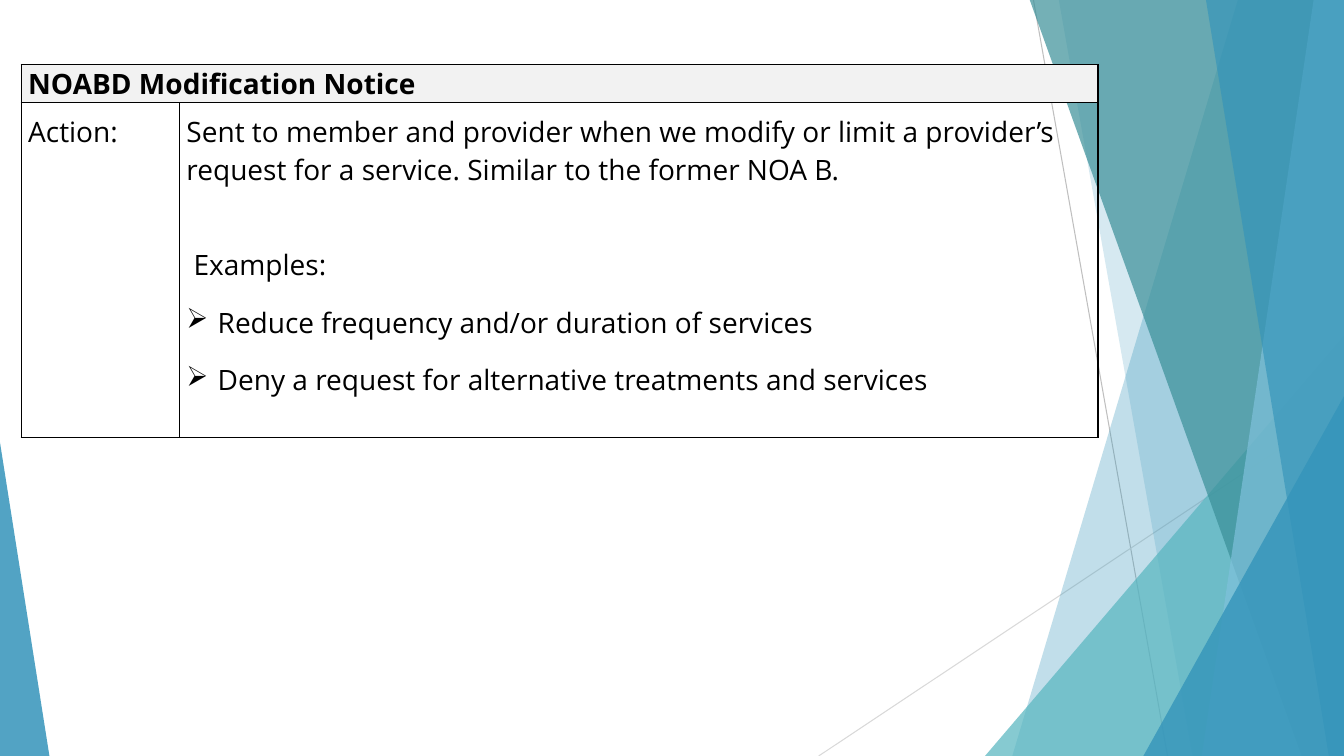
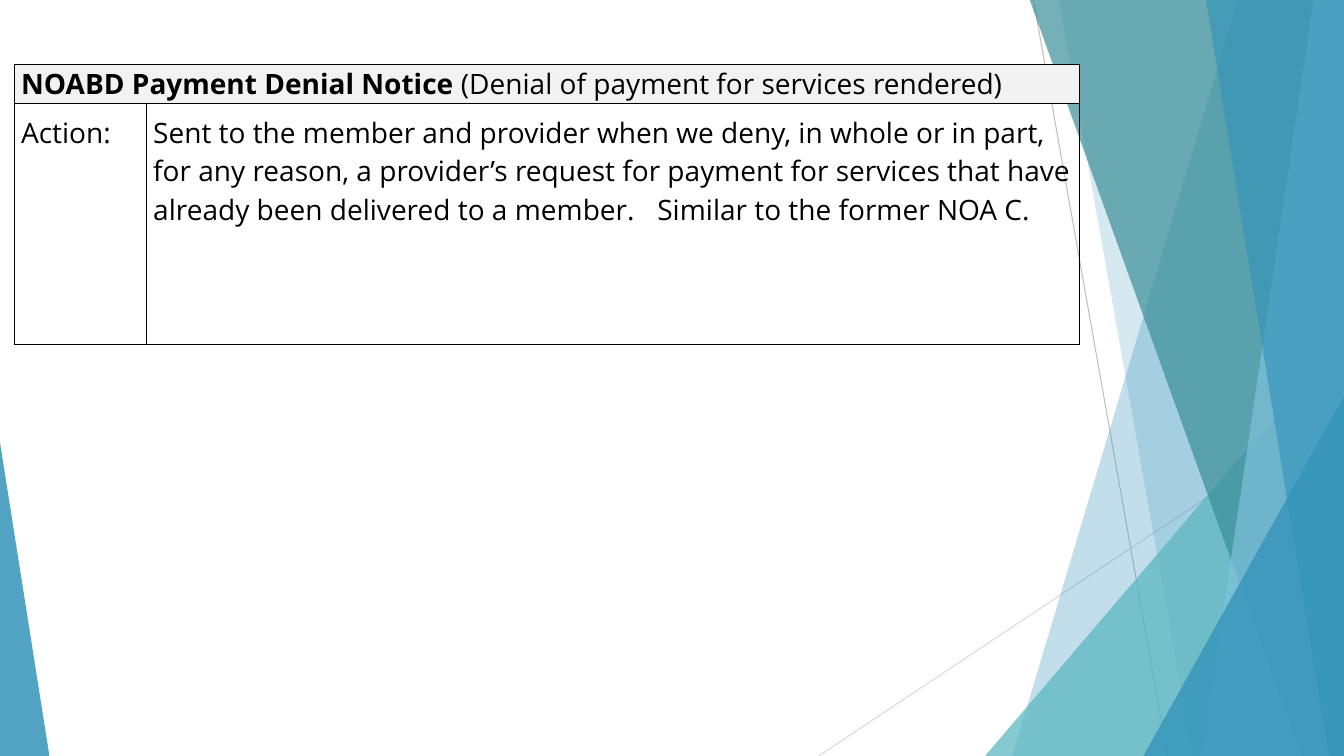
from dataclasses import dataclass

from lxml import etree
from pptx import Presentation
from pptx.dml.color import RGBColor
from pptx.enum import shapes
from pptx.oxml import ns
from pptx.util import Inches, Pt

BLUE = RGBColor(0x34, 0x94, 0xBA)
SKY = RGBColor(0x7F, 0xC1, 0xDB)
AQUA = RGBColor(0x58, 0xB6, 0xC0)
TEAL = RGBColor(0x3A, 0x8F, 0x98)
SILVER = RGBColor(0xBF, 0xBF, 0xBF)
PALE = RGBColor(0xD9, 0xD9, 0xD9)
HEADER = RGBColor(0xF2, 0xF2, 0xF2)
BLACK = RGBColor(0, 0, 0)
FONT = "Open Sans"
WIDTH, HEIGHT, TOP = 13.33, 7.5, -0.01


@dataclass
class Ray:
    start: tuple[float, float]
    end: tuple[float, float]
    color: RGBColor


@dataclass
class Band:
    """Strip along the right edge, with a slanted left side."""
    top_x: float
    bottom_x: float
    color: RGBColor
    alpha: int


@dataclass
class Wedge:
    """Triangle standing on the bottom edge."""
    left: float
    width: float
    height: float
    apex: float
    color: RGBColor
    alpha: int


@dataclass
class Para:
    text: str
    bold: bool = False
    tail: str = ""
    spacing: float = 1.0
    before: float = 0
    indent: float = 0
    bullet: str = ""
    tab: float = 0


@dataclass
class Notice:
    left: float
    cols: tuple[float, float]
    rows: tuple[float, float]
    heading: Para
    body: list[Para]


BACKDROP = [
    Ray((10.25, 0), (11.58, HEIGHT), SILVER),
    Ray((WIDTH, 4.03), (8.12, HEIGHT), PALE),
    Band(12.28, 10.04, BLUE, 30),
    Band(10.5, 11.83, BLUE, 20),
    Wedge(9.77, 3.56, 4.17, 1, AQUA, 72),
    Band(10.21, 12.91, TEAL, 70),
    Band(13.03, 11.92, SKY, 70),
    Band(11.96, 13.18, BLUE, 65),
    Wedge(11.34, 1.99, 3.57, 1, BLUE, 80),
    Wedge(0, 0.49, 3.11, 0, BLUE, 85),
]

NOTICES = [
    Notice(0.21, (1.57, 9.11), (0.38, 3.32), Para("NOABD Modification Notice", bold=True), [
        Para("Sent to member and provider when we modify or limit a provider’s "
             "request for a service. Similar to the former NOA B."),
        Para("Examples:", spacing=1.5, before=27, indent=0.07),
        Para("Reduce frequency and/or duration of services",
             spacing=1.5, indent=0.31, bullet="➢"),
        Para("Deny a request for alternative treatments and services",
             spacing=1.5, indent=0.31, bullet="➢"),
    ]),
    Notice(0.14, (1.31, 9.26), (0.39, 2.39),
           Para("NOABD Payment Denial Notice", bold=True,
                tail=" (Denial of payment for services rendered)"), [
        Para("Sent to the member and provider when we deny, in whole or in part, for any "
             "reason, a provider’s request for payment for services that have already been "
             "delivered to a member.\tSimilar to the former NOA C.", tab=5),
    ]),
]


def sub(parent, tag: str, **attrs):
    """Append a DrawingML child element."""
    return etree.SubElement(parent, ns.qn(f"a:{tag}"), {k: str(v) for k, v in attrs.items()})


def paint(sp, color: RGBColor, alpha: int) -> None:
    """Give a shape a translucent fill without outline or shadow."""
    sp.shadow.inherit = False
    sp.line.fill.background()
    sp.fill.solid()
    sp.fill.fore_color.rgb = color
    clr = sp.element.spPr.find(f"{ns.qn('a:solidFill')}/{ns.qn('a:srgbClr')}")
    sub(clr, "alpha", val=alpha * 1000)


def add_ray(s, ray: Ray) -> None:
    """Draw a thin line."""
    line = s.shapes.add_connector(shapes.MSO_CONNECTOR.STRAIGHT,
                                  *map(Inches, ray.start + ray.end))
    line.line.color.rgb = ray.color
    line.line.width = Pt(0.75)
    sub(line.element.spPr, "effectLst")


def add_band(s, band: Band) -> None:
    """Draw a slanted strip."""
    points = [(band.top_x, TOP), (WIDTH, TOP), (WIDTH, HEIGHT), (band.bottom_x, HEIGHT)]
    corners = [(Inches(x), Inches(y)) for x, y in points]
    builder = s.shapes.build_freeform(*corners[0])
    builder.add_line_segments(corners[1:], close=True)
    paint(builder.convert_to_shape(), band.color, band.alpha)


def add_wedge(s, wedge: Wedge) -> None:
    """Draw a triangle."""
    sp = s.shapes.add_shape(shapes.MSO_SHAPE.ISOSCELES_TRIANGLE, Inches(wedge.left),
                            Inches(HEIGHT - wedge.height), Inches(wedge.width),
                            Inches(wedge.height))
    sp.adjustments[0] = wedge.apex
    paint(sp, wedge.color, wedge.alpha)


def add_backdrop(s, layout) -> None:
    """Draw the backdrop and move it to the layout that all slides share."""
    draw = {Ray: add_ray, Band: add_band, Wedge: add_wedge}
    for part in BACKDROP:
        draw[type(part)](s, part)
    for sp in list(s.shapes):
        layout.shapes.element.append(sp.element)


def write_para(p, para: Para) -> None:
    """Fill and format one paragraph."""
    pPr = p._p.get_or_add_pPr()
    if para.indent:
        pPr.set("marL", str(Inches(para.indent)))
    if para.bullet:
        pPr.set("indent", str(-Inches(para.indent)))
        sub(pPr, "buChar", char=para.bullet)
    if para.tab:
        sub(sub(pPr, "tabLst"), "tab", pos=Inches(para.tab), algn="l")
    p.line_spacing = para.spacing
    p.space_before = Pt(para.before)
    p.font.name = FONT
    p.font.size = Pt(20)
    p.font.color.rgb = BLACK
    r = p.add_run()
    r.text = para.text
    if para.tail:
        r.font.bold = para.bold
        p.add_run().text = para.tail
    else:
        p.font.bold = para.bold


def write_cell(cell, paras: list[Para], top: float) -> None:
    """Write paragraphs into a cell."""
    cell.margin_left = cell.margin_right = Inches(0.07)
    cell.margin_top, cell.margin_bottom = Inches(top), 0
    tf = cell.text_frame
    for i, para in enumerate(paras):
        write_para(tf.add_paragraph() if i else tf.paragraphs[0], para)


def add_borders(cell) -> None:
    """Outline a cell in black."""
    tcPr = cell._tc.get_or_add_tcPr()
    for i, side in enumerate(("lnL", "lnR", "lnT", "lnB")):
        ln = sub(tcPr, side, w=Pt(1))
        sub(sub(ln, "solidFill"), "srgbClr", val=BLACK)
        tcPr.insert(i, ln)


def add_notice(s, notice: Notice) -> None:
    """Draw the table that describes a notice."""
    tbl = s.shapes.add_table(2, 2, Inches(notice.left), Inches(0.64),
                             Inches(sum(notice.cols)), Inches(sum(notice.rows))).table
    tbl.first_row = tbl.horz_banding = False
    for col, width in zip(tbl.columns, notice.cols):
        col.width = Inches(width)
    for row, height in zip(tbl.rows, notice.rows):
        row.height = Inches(height)
    heading, action, body = tbl.cell(0, 0), tbl.cell(1, 0), tbl.cell(1, 1)
    heading.merge(tbl.cell(0, 1))
    write_cell(heading, [notice.heading], 0)
    write_cell(action, [Para("Action:")], 0.1)
    write_cell(body, notice.body, 0.1)
    for cell in tbl.iter_cells():
        cell.fill.background()
        add_borders(cell)
    heading.fill.solid()
    heading.fill.fore_color.rgb = HEADER


def main() -> None:
    """Build the presentation."""
    prs = Presentation()
    prs.slide_width, prs.slide_height = Inches(WIDTH), Inches(HEIGHT)
    layout = prs.slide_layouts.get_by_name("Blank")
    for i, notice in enumerate(NOTICES):
        s = prs.slides.add_slide(layout)
        if i == 0:
            add_backdrop(s, layout)
        add_notice(s, notice)
    prs.save("out.pptx")


if __name__ == "__main__":
    main()
